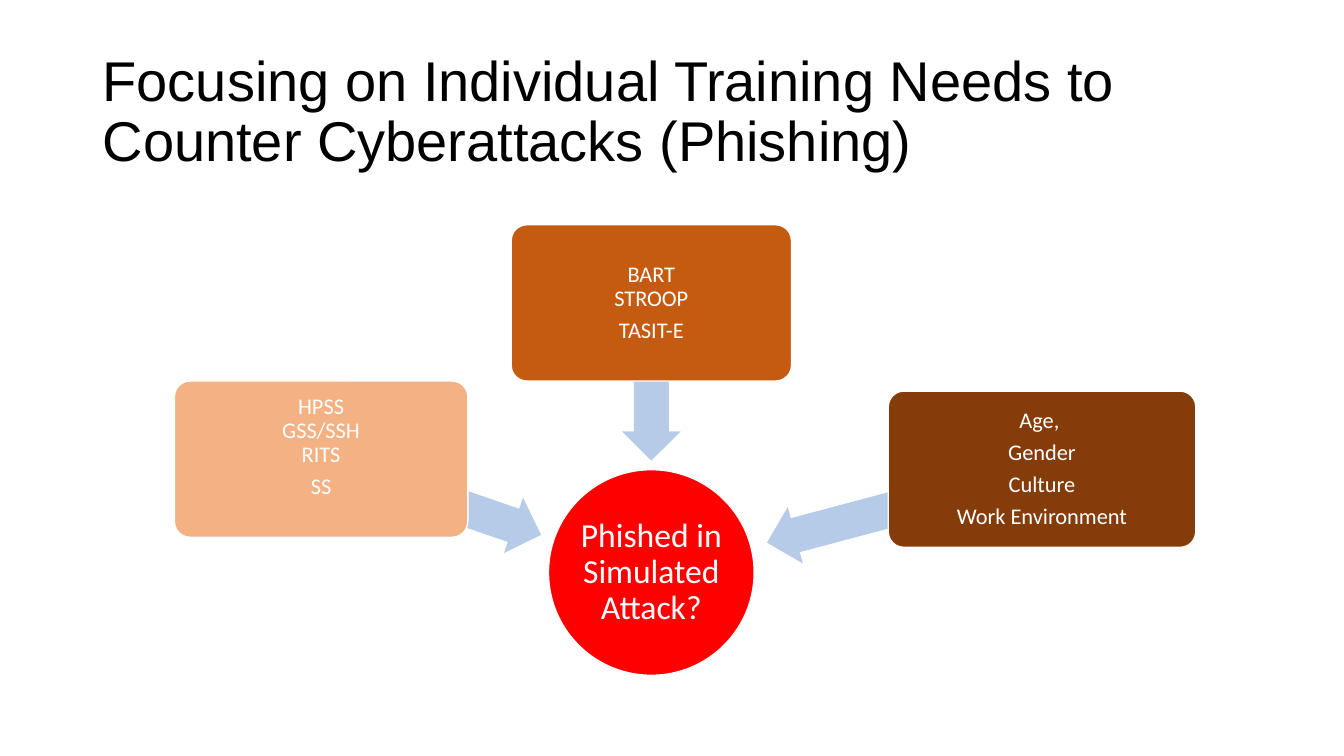
"""Build the slide on training needs against phishing."""
from dataclasses import dataclass

from lxml.etree import SubElement
from pptx import Presentation
from pptx.dml.color import RGBColor
from pptx.enum.shapes import MSO_SHAPE as Kind
from pptx.enum.text import MSO_ANCHOR as Anchor, PP_ALIGN as Align
from pptx.oxml.ns import qn
from pptx.shapes.autoshape import Shape
from pptx.slide import Slide
from pptx.text.text import TextFrame
from pptx.util import Emu, Pt

SCALE = 9144
WHITE = RGBColor(0xFF, 0xFF, 0xFF)
BLACK = RGBColor(0, 0, 0)
RED = RGBColor(0xFF, 0, 0)
BLUE = RGBColor(0xB5, 0xCB, 0xE7)
PEACH = RGBColor(0xF4, 0xB1, 0x83)
RUST = RGBColor(0xC5, 0x5A, 0x11)
BROWN = RGBColor(0x84, 0x3C, 0x0B)


@dataclass(frozen=True)
class Area:
    left: int
    top: int
    width: int
    height: int


@dataclass(frozen=True)
class Factor:
    box: Area
    fill: RGBColor
    paras: tuple[str, ...]
    arrow: Area
    turn: float


CENTER = Area(544, 466, 204, 204)
FACTORS = (
    Factor(Area(173, 378, 291, 155), PEACH, ("HPSS\nGSS/SSH\nRITS", "SS\n"),
           Area(312, 464, 231, 58), 199),
    Factor(Area(507, 223, 278, 155), RUST, ("BART\nSTROOP", "TASIT-E"),
           Area(568, 350, 156, 58), 270),
    Factor(Area(881, 388, 305, 155), BROWN,
           ("Age, ", "Gender", "Culture", "Work Environment"),
           Area(756, 473, 283, 58), 345.1),
)


def px(count: int) -> Emu:
    """Turn pixels into EMU."""
    return Emu(count * SCALE)


def place(area: Area) -> tuple[Emu, Emu, Emu, Emu]:
    """Give the four lengths of an area in EMU."""
    return px(area.left), px(area.top), px(area.width), px(area.height)


def write(frame: TextFrame, paras: tuple[str, ...], size: int, font: str,
          color: RGBColor, align: Align, after: float) -> None:
    """Fill a frame with paragraphs, run by run."""
    frame.word_wrap = True
    frame.vertical_anchor = Anchor.MIDDLE
    for index, text in enumerate(paras):
        para = frame.add_paragraph() if index else frame.paragraphs[0]
        para.alignment = align
        para.line_spacing = 0.9
        para.space_after = Pt(after * size)
        for row, line in enumerate(text.split("\n")):
            if row:
                para.add_line_break()
            if line:
                run = para.add_run()
                run.text = line
                run.font.size = Pt(size)
                run.font.name = font
                run.font.color.rgb = color
        for mark in para._p.findall(qn("a:br")):
            SubElement(mark, qn("a:rPr"), sz=str(size * 100))


def draw(slide: Slide, kind: Kind, area: Area, fill: RGBColor) -> Shape:
    """Add a flat shape without an outline."""
    shape = slide.shapes.add_shape(kind, *place(area))
    shape.shadow.inherit = False
    shape.fill.solid()
    shape.fill.fore_color.rgb = fill
    shape.line.fill.background()
    return shape


def label(shape: Shape, paras: tuple[str, ...], size: int, inset: int) -> None:
    """Give a shape a white outline and white centred text."""
    shape.line.color.rgb = WHITE
    shape.line.width = Pt(1)
    frame = shape.text_frame
    frame.margin_left = frame.margin_right = px(inset)
    frame.margin_top = frame.margin_bottom = px(inset)
    write(frame, paras, size, "Calibri", WHITE, Align.CENTER, 0.35)


def link(slide: Slide, area: Area, turn: float) -> None:
    """Add a turned block arrow."""
    arrow = draw(slide, Kind.LEFT_ARROW, area, BLUE)
    arrow.adjustments[0] = 0.6
    arrow.adjustments[1] = 0.5
    arrow.rotation = turn


def main() -> None:
    """Build and save the slide."""
    deck = Presentation()
    deck.slide_width, deck.slide_height = px(1333), px(750)
    slide = deck.slides.add_slide(deck.slide_layouts[6])
    title = slide.shapes.add_textbox(*place(Area(92, 40, 1150, 145)))
    write(title.text_frame,
          ("Focusing on Individual Training Needs to Counter Cyberattacks (Phishing)",),
          40, "Arial", BLACK, Align.LEFT, 0)
    goal = draw(slide, Kind.OVAL, CENTER, RED)
    label(goal, ("Phished in Simulated Attack?",), 24, 2)
    for factor in FACTORS:
        link(slide, factor.arrow, factor.turn)
        box = draw(slide, Kind.ROUNDED_RECTANGLE, factor.box, factor.fill)
        box.adjustments[0] = 0.1
        label(box, factor.paras, 16, 3)
    deck.save("out.pptx")


if __name__ == "__main__":
    main()
